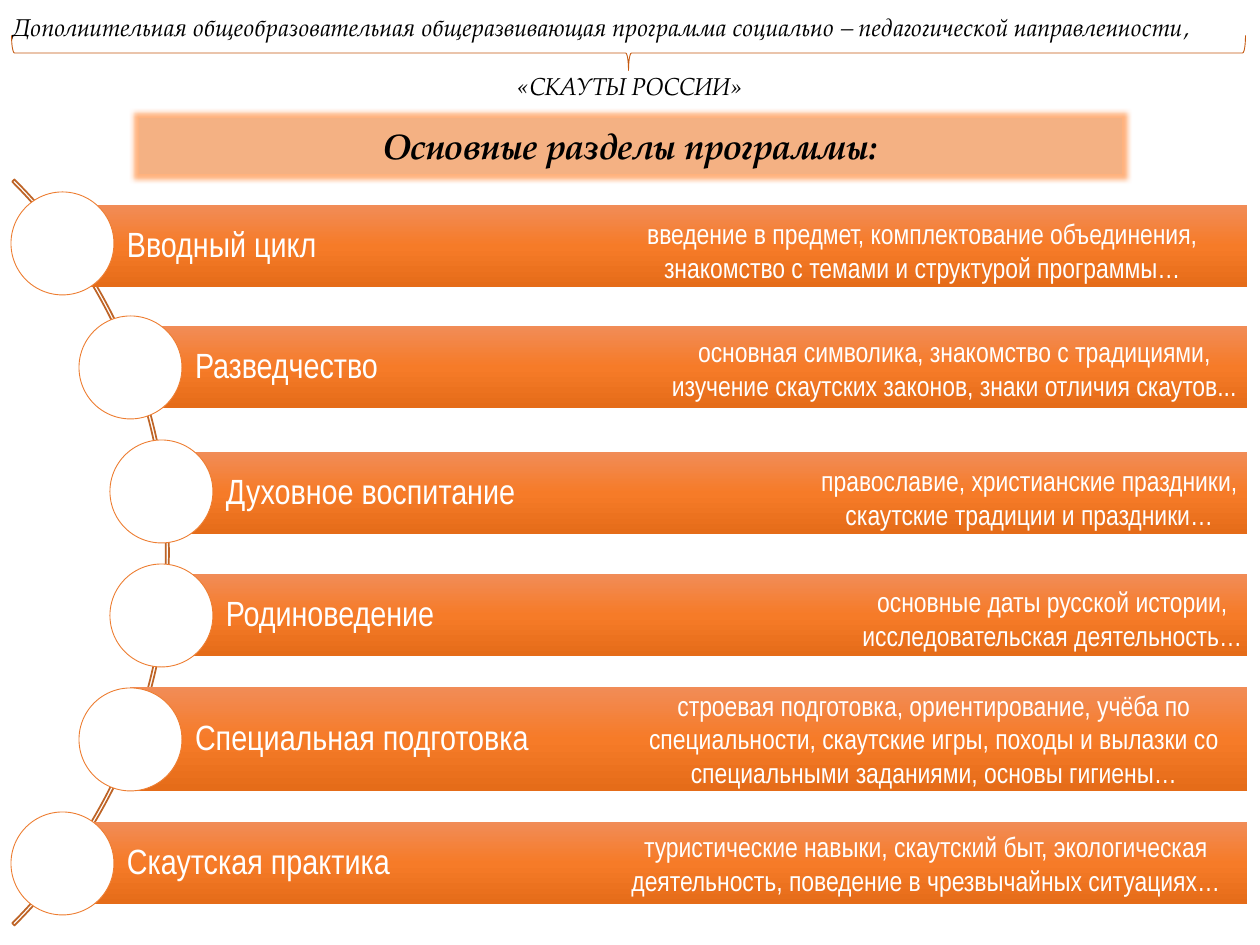
from copy import deepcopy
from dataclasses import dataclass

from lxml import etree
from pptx import Presentation
from pptx.dml.color import RGBColor
from pptx.enum.shapes import MSO_SHAPE
from pptx.enum.text import MSO_ANCHOR, MSO_AUTO_SIZE, PP_ALIGN
from pptx.oxml.ns import qn
from pptx.util import Emu, Pt

ARC, BRACE = MSO_SHAPE.BLOCK_ARC, MSO_SHAPE.RIGHT_BRACE
RECT, ROUND, OVAL = MSO_SHAPE.RECTANGLE, MSO_SHAPE.ROUNDED_RECTANGLE, MSO_SHAPE.OVAL
TOP, MIDDLE = MSO_ANCHOR.TOP, MSO_ANCHOR.MIDDLE
LEFT, CENTER = PP_ALIGN.LEFT, PP_ALIGN.CENTER
FIXED = MSO_AUTO_SIZE.NONE

SCALE = 914400 / 126
EDGE, DISK, STEP, START = 1247, 103, 124, 192
SERIF, SANS = "TeX Gyre Pagella", "Arial Narrow"
STOPS = [(0, "F18C57"), (0.5, "F67B28"), (1, "E56C19")]

INTRO = {"name": SERIF, "size": Pt(14), "italic": True}
HEAD = {"name": SERIF, "size": Pt(20), "bold": True, "italic": True}
LABEL = {"name": SANS, "size": Pt(20)}
NOTE = {"name": SANS, "size": Pt(16)}


@dataclass
class Box:
    x: int
    y: int
    w: int
    h: int


@dataclass
class Part:
    name: str
    note: str
    disk: int
    top: int
    high: int
    area: Box


PARTS = [
    Part("Вводный цикл",
         "введение в предмет, комплектование объединения, "
         "знакомство с темами и структурой программы…",
         11, 205, 82, Box(625, 202, 595, 97)),
    Part("Разведчество",
         "основная символика, знакомство с традициями, "
         "изучение скаутских законов, знаки отличия скаутов...",
         79, 326, 82, Box(649, 320, 611, 97)),
    Part("Духовное воспитание",
         "православие, христианские праздники, скаутские традиции и праздники…",
         110, 452, 82, Box(776, 449, 507, 97)),
    Part("Родиноведение",
         "основные даты русской истории, исследовательская деятельность…",
         110, 574, 82, Box(799, 570, 507, 97)),
    Part("Специальная подготовка",
         "строевая подготовка, ориентирование, учёба по специальности, скаутские игры, "
         "походы и вылазки со специальными заданиями, основы гигиены…",
         79, 687, 104, Box(629, 690, 610, 97)),
    Part("Скаутская практика",
         "туристические навыки, скаутский быт, экологическая деятельность, "
         "поведение в чрезвычайных ситуациях…",
         11, 822, 82, Box(590, 815, 672, 97)),
]


def px(n: int) -> Emu:
    return Emu(round(n * SCALE))


def ink(code: str) -> RGBColor:
    return RGBColor.from_string(code)


def apply(item, values: dict) -> None:
    for key, value in values.items():
        setattr(item, key, value)


def place(box: Box) -> list:
    return [px(n) for n in (box.x, box.y, box.w, box.h)]


def draw(slide, kind, box: Box, fill: str = "", line: str = "", width: float = 0.5):
    shape = slide.shapes.add_shape(kind, *place(box))
    shape.shadow.inherit = False
    if fill:
        shape.fill.solid()
        shape.fill.fore_color.rgb = ink(fill)
    else:
        shape.fill.background()
    if line:
        shape.line.color.rgb = ink(line)
        shape.line.width = Pt(width)
    else:
        shape.line.fill.background()
    return shape


def write(shape, lines: list, font: dict, color: str, align, anchor) -> None:
    frame = shape.text_frame
    apply(frame, {"word_wrap": True, "auto_size": FIXED, "vertical_anchor": anchor})
    frame.text = "\n".join(lines)
    for para in frame.paragraphs:
        para.alignment = align
        for run in para.runs:
            apply(run.font, font)
            run.font.color.rgb = ink(color)


def shade(shape) -> None:
    fill = shape.fill
    fill.gradient()
    fill.gradient_angle = 270
    group = shape.element.spPr.find(qn("a:gradFill")).find(qn("a:gsLst"))
    group.append(deepcopy(group[0]))
    for stop, (pos, color) in zip(fill.gradient_stops, STOPS):
        stop.position = pos
        stop.color.rgb = ink(color)


def glow(shape, size: int, color: str) -> None:
    shape.shadow.inherit = False
    effect = shape.element.spPr.find(qn("a:effectLst"))
    halo = etree.SubElement(effect, qn("a:glow"), rad=str(px(size)))
    tint = etree.SubElement(halo, qn("a:srgbClr"), val=color)
    etree.SubElement(tint, qn("a:alpha"), val="60000")


def row(slide, part: Part, disk_y: int) -> None:
    mid = part.disk + DISK // 2
    bar = draw(slide, RECT, Box(mid, part.top, EDGE - mid, part.high))
    shade(bar)
    write(bar, [part.name], LABEL, "FFFFFF", LEFT, MIDDLE)
    apply(bar.text_frame, {"margin_left": px(65), "margin_right": px(8),
                           "margin_top": px(8), "margin_bottom": px(8)})
    bar.text_frame.paragraphs[0].line_spacing = 0.9
    draw(slide, OVAL, Box(part.disk, disk_y, DISK, DISK), "FFFFFF", "ED7D31")


def main() -> None:
    deck = Presentation()
    deck.slide_width, deck.slide_height = px(1260), px(945)
    slide = deck.slides.add_slide(deck.slide_layouts[5])

    arc = draw(slide, ARC, Box(-886, 25, 1055, 1055), line="BE6427", width=1)
    for i, value in enumerate((189, 27, 0.003)):
        arc.adjustments[i] = value
    for i, part in enumerate(PARTS):
        row(slide, part, START + i * STEP)

    intro = slide.shapes.add_textbox(*place(Box(0, 6, 1259, 102)))
    write(intro, ["Дополнительная общеобразовательная общеразвивающая программа "
                  "социально – педагогической направленности,",
                  "«СКАУТЫ РОССИИ»"], INTRO, "000000", LEFT, TOP)
    apply(intro.text_frame.paragraphs[1], {"alignment": CENTER, "space_before": Pt(17)})

    brace = draw(slide, BRACE, Box(611, -564, 35, 1234), line="C55A11")
    brace.rotation = 90

    head = slide.shapes.title
    apply(head, dict(zip(("left", "top", "width", "height"), place(Box(139, 118, 983, 56)))))
    head.fill.solid()
    head.fill.fore_color.rgb = ink("F4B183")
    glow(head, 11, "FF7F27")
    write(head, ["Основные разделы программы:"], HEAD, "000000", CENTER, TOP)

    for part in PARTS:
        note = draw(slide, ROUND, part.area)
        write(note, [part.note], NOTE, "FFFFFF", CENTER, MIDDLE)

    deck.save("out.pptx")


if __name__ == "__main__":
    main()
